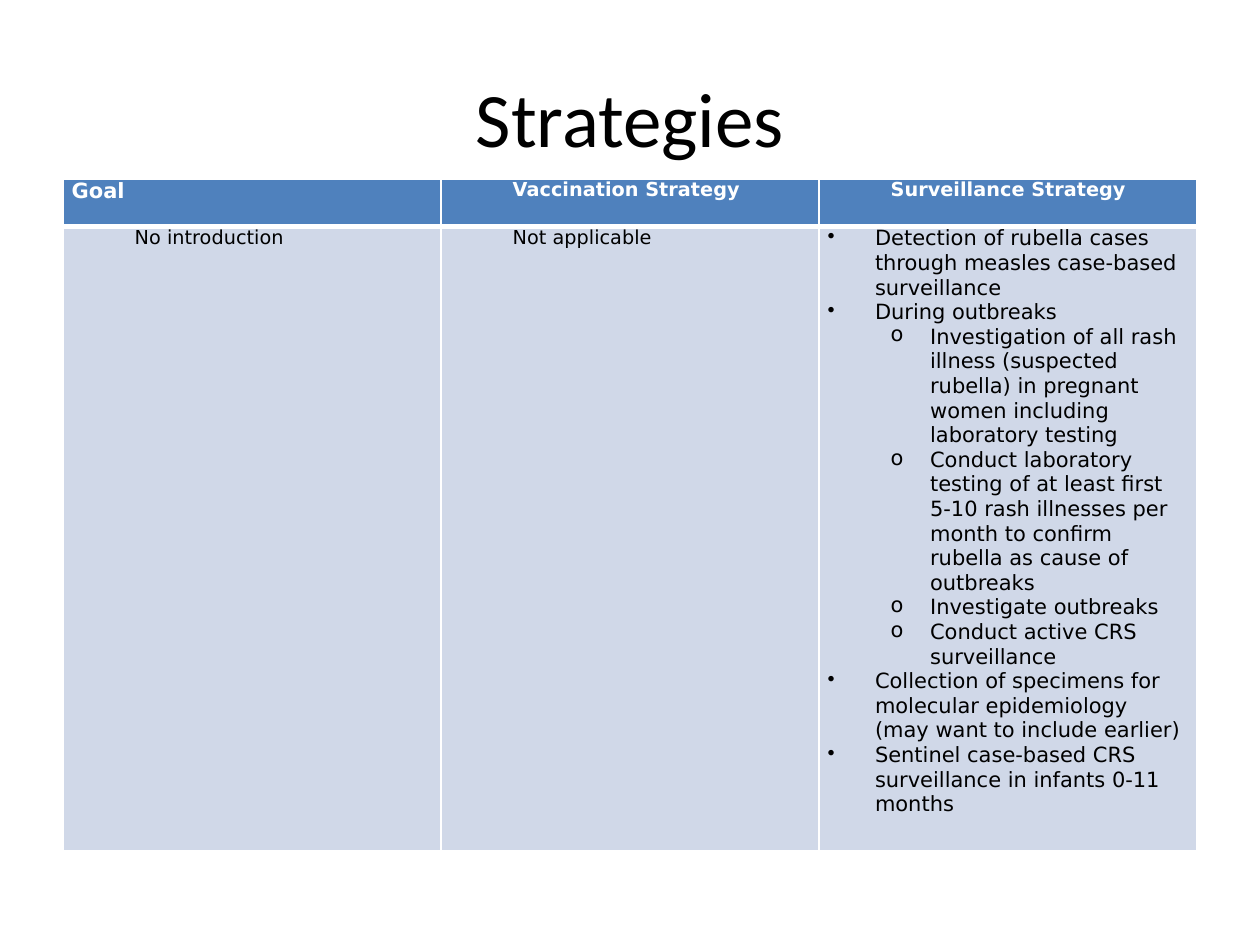
from lxml import etree
from pptx import Presentation
from pptx.dml.color import RGBColor
from pptx.enum.text import MSO_ANCHOR, PP_ALIGN
from pptx.oxml.ns import qn
from pptx.util import Pt

CENTER = PP_ALIGN.CENTER
MIDDLE = MSO_ANCHOR.MIDDLE
TOP = MSO_ANCHOR.TOP
TITLE_ONLY = 5

BLACK, WHITE = "000000", "FFFFFF"
HEADER_FILL, BODY_FILL = "4F81BD", "D0D8E8"
TITLE_FONT, TABLE_FONT = "Calibri", "DejaVu Sans"
COLUMN_WIDTH = 216
ROW_HEIGHTS = (27, 357)
THIN, THICK = 1, 3

# Bullet character, left margin and first-line indent for each level
BULLETS = (("•", 27, -27), ("o", 58.5, -22.5))

SURVEILLANCE = (
    (0, "Detection of rubella cases through measles case-based surveillance"),
    (0, "During outbreaks"),
    (1, "Investigation of all rash illness (suspected rubella) in pregnant "
        "women including laboratory testing"),
    (1, "Conduct laboratory testing of at least first 5-10 rash illnesses per "
        "month to confirm rubella as cause of outbreaks"),
    (1, "Investigate outbreaks"),
    (1, "Conduct active CRS surveillance"),
    (0, "Collection of specimens for molecular epidemiology (may want to "
        "include earlier)"),
    (0, "Sentinel case-based CRS surveillance in infants 0-11 months"),
)


def color(value):
    return RGBColor.from_string(value)


def write(para, text, size=11, font=TABLE_FONT, ink=BLACK, bold=False,
          align=None, margin=0, indent=0, level=0, bullet=None):
    """Put one formatted span into a paragraph."""
    span = para.add_run()
    span.text = text
    span.font.size = Pt(size)
    span.font.name = font
    span.font.bold = bold
    span.font.color.rgb = color(ink)
    para.level = level
    if align is not None:
        para.alignment = align
    properties = para._p.get_or_add_pPr()
    properties.set("marL", str(Pt(margin)))
    properties.set("indent", str(Pt(indent)))
    if bullet:
        mark = etree.SubElement(properties, qn("a:buChar"))
        mark.set("char", bullet)


def add_title(page, text):
    box = page.shapes.title
    box.left, box.top, box.width, box.height = Pt(36), Pt(21.6), Pt(648), Pt(90)
    box.text_frame.vertical_anchor = MIDDLE
    write(box.text_frame.paragraphs[0], text, size=44, font=TITLE_FONT,
          align=CENTER)


def set_borders(cell, top, bottom):
    widths = {"a:lnL": THIN, "a:lnR": THIN, "a:lnT": top, "a:lnB": bottom}
    properties = cell._tc.get_or_add_tcPr()
    for side, width in widths.items():
        line = etree.SubElement(properties, qn(side), w=str(Pt(width)))
        fill = etree.SubElement(line, qn("a:solidFill"))
        etree.SubElement(fill, qn("a:srgbClr"), val=WHITE)


def style_cell(cell, header):
    # Borders come before the fill in the cell properties
    if header:
        set_borders(cell, THIN, THICK)
    else:
        set_borders(cell, THICK, THIN)
    cell.fill.solid()
    cell.fill.fore_color.rgb = color(HEADER_FILL if header else BODY_FILL)
    cell.margin_left = cell.margin_right = Pt(5)
    cell.margin_top = cell.margin_bottom = Pt(0)
    cell.vertical_anchor = TOP


def add_strategy_table(page):
    frame = page.shapes.add_table(2, 3, Pt(36), Pt(102.3),
                                  Pt(3 * COLUMN_WIDTH), Pt(sum(ROW_HEIGHTS)))
    table = frame.table
    for column in table.columns:
        column.width = Pt(COLUMN_WIDTH)
    for index, height in enumerate(ROW_HEIGHTS):
        table.rows[index].height = Pt(height)
        for cell in table.rows[index].cells:
            style_cell(cell, header=index == 0)
    return table


def write_cell(cell, text, **style):
    write(cell.text_frame.paragraphs[0], text, **style)


def write_list(cell, items):
    text_frame = cell.text_frame
    for index, (level, text) in enumerate(items):
        para = text_frame.add_paragraph() if index else text_frame.paragraphs[0]
        bullet, margin, indent = BULLETS[level]
        write(para, text, size=12, level=level, bullet=bullet,
              margin=margin, indent=indent)


def main():
    deck = Presentation()
    deck.slide_width, deck.slide_height = Pt(720), Pt(540)
    page = deck.slides.add_slide(deck.slide_layouts[TITLE_ONLY])
    add_title(page, "Strategies")
    table = add_strategy_table(page)

    # Header row
    heading = {"ink": WHITE, "bold": True}
    write_cell(table.cell(0, 0), "Goal", size=12, **heading)
    write_cell(table.cell(0, 1), "Vaccination Strategy", margin=36, **heading)
    write_cell(table.cell(0, 2), "Surveillance Strategy", margin=36, **heading)

    # Body row
    write_cell(table.cell(1, 0), "No introduction", margin=36)
    write_cell(table.cell(1, 1), "Not applicable", margin=36)
    write_list(table.cell(1, 2), SURVEILLANCE)

    deck.save("out.pptx")


if __name__ == "__main__":
    main()
